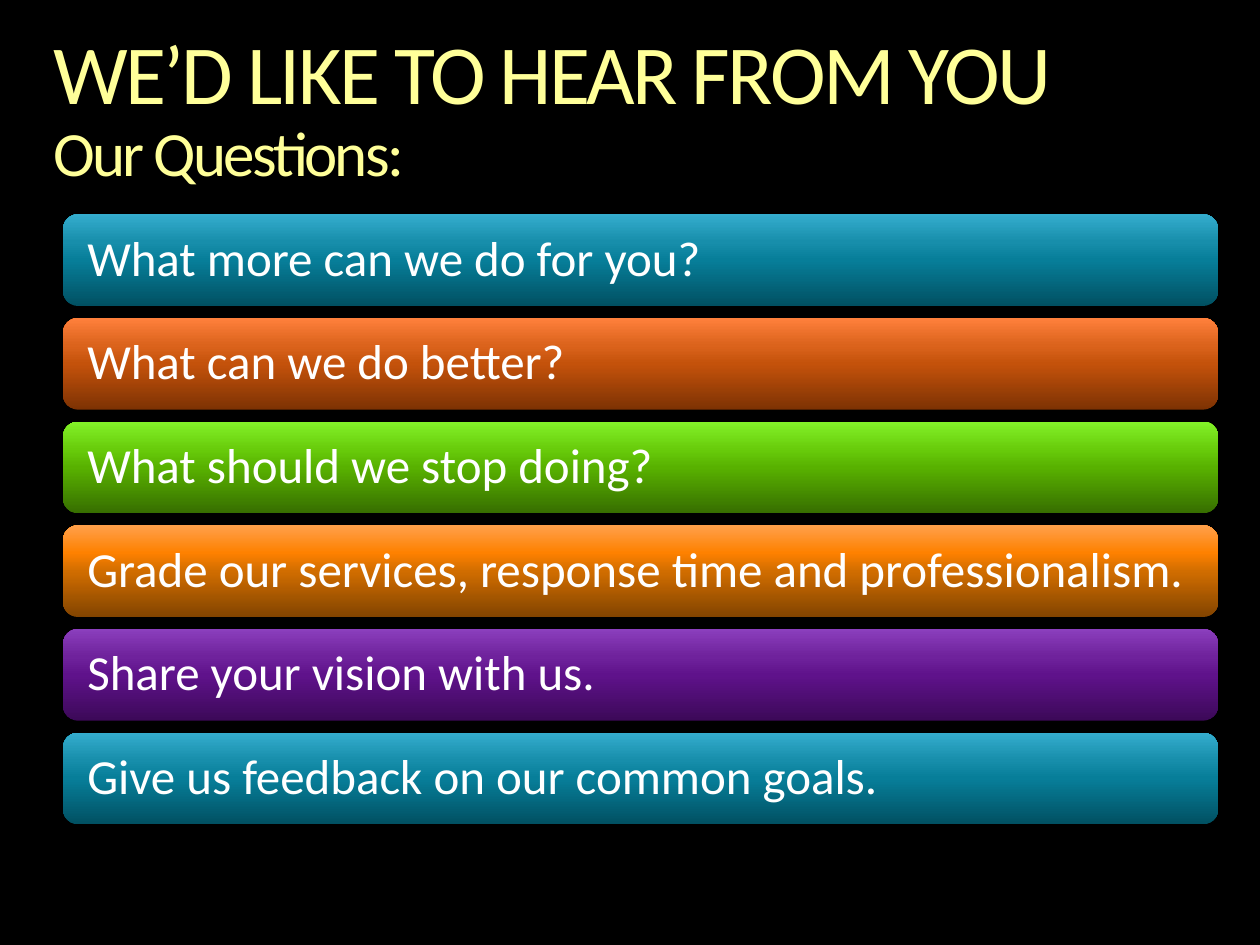
import copy
from dataclasses import dataclass

import pptx
import pptx.dml.color
import pptx.enum.shapes
import pptx.enum.text
import pptx.oxml.ns
import pptx.util

Cm = pptx.util.Cm
Pt = pptx.util.Pt
RGBColor = pptx.dml.color.RGBColor
Anchor = pptx.enum.text.MSO_ANCHOR
qn = pptx.oxml.ns.qn

BLACK = RGBColor(0x00, 0x00, 0x00)
WHITE = RGBColor(0xFF, 0xFF, 0xFF)
YELLOW = RGBColor(0xFF, 0xFF, 0x99)
TEAL = (RGBColor(0x01, 0x50, 0x62), RGBColor(0x07, 0x7E, 0x99),
        RGBColor(0x17, 0x8E, 0xAB), RGBColor(0x35, 0xAD, 0xCE))
RUST = (RGBColor(0x7D, 0x32, 0x03), RGBColor(0xC4, 0x52, 0x0B),
        RGBColor(0xDB, 0x63, 0x1C), RGBColor(0xFF, 0x80, 0x3C))
GREEN = (RGBColor(0x37, 0x6E, 0x00), RGBColor(0x58, 0xB1, 0x00),
         RGBColor(0x68, 0xCC, 0x0B), RGBColor(0x83, 0xF2, 0x29))
ORANGE = (RGBColor(0x82, 0x44, 0x00), RGBColor(0xD1, 0x6D, 0x00),
          RGBColor(0xFE, 0x81, 0x00), RGBColor(0xFF, 0xA0, 0x4B))
PURPLE = (RGBColor(0x3C, 0x09, 0x58), RGBColor(0x5F, 0x12, 0x8B),
          RGBColor(0x6F, 0x22, 0x9C), RGBColor(0x8B, 0x3F, 0xBD))
STOPS = (0, 0.5, 0.7, 1)

FONT = "Calibri"
BAR_LEFT, BAR_TOP = Cm(1.27), Cm(4.32)
BAR_WIDTH, BAR_HEIGHT = Cm(23.29), Cm(1.85)
BAR_PITCH = Cm(2.09)


@dataclass
class Question:
    text: str
    colors: tuple[RGBColor, ...]


QUESTIONS = [
    Question("What more can we do for you?", TEAL),
    Question("What can we do better?", RUST),
    Question("What should we stop doing?", GREEN),
    Question("Grade our services, response time and professionalism.", ORANGE),
    Question("Share your vision with us.", PURPLE),
    Question("Give us feedback on our common goals.", TEAL),
]


def add_text(p, text: str, *, size: float, color: RGBColor, spacing: float = 0) -> None:
    p.alignment = pptx.enum.text.PP_ALIGN.LEFT
    p.line_spacing = 0.9
    r = p.add_run()
    r.text = text
    r.font.name = FONT
    r.font.size = Pt(size)
    r.font.color.rgb = color
    if spacing:
        r._r.get_or_add_rPr().set("spc", str(round(spacing * 100)))


def set_frame(tf, anchor: Anchor, inset: int) -> None:
    tf.word_wrap = True
    tf.vertical_anchor = anchor
    tf.margin_left = tf.margin_right = inset
    tf.margin_top = tf.margin_bottom = inset


def fill_gradient(sp, colors: tuple[RGBColor, ...]) -> None:
    sp.fill.gradient()
    sp.fill.gradient_angle = 90
    gs_list = sp._element.spPr.find(qn("a:gradFill")).find(qn("a:gsLst"))
    while len(gs_list) < len(colors):
        gs_list.append(copy.deepcopy(gs_list[0]))
    for stop, position, color in zip(sp.fill.gradient_stops, STOPS, colors):
        stop.position = position
        stop.color.rgb = color


def add_title(s) -> None:
    sp = s.shapes.title
    sp.left, sp.top, sp.width, sp.height = Cm(1.07), Cm(0.64), Cm(23.29), Cm(3.23)
    tf = sp.text_frame
    set_frame(tf, Anchor.TOP, 0)
    tf.auto_size = pptx.enum.text.MSO_AUTO_SIZE.SHAPE_TO_FIT_TEXT
    p = tf.paragraphs[0]
    add_text(p, "WE’D LIKE TO HEAR FROM YOU", size=48, color=YELLOW, spacing=-1.5)
    p.add_line_break()
    add_text(p, "Our Questions:", size=36, color=YELLOW, spacing=-1.5)


def add_bar(s, question: Question, top: int) -> None:
    sp = s.shapes.add_shape(pptx.enum.shapes.MSO_SHAPE.ROUNDED_RECTANGLE,
                            BAR_LEFT, top, BAR_WIDTH, BAR_HEIGHT)
    sp.shadow.inherit = False
    sp.line.fill.background()
    fill_gradient(sp, question.colors)
    tf = sp.text_frame
    set_frame(tf, Anchor.MIDDLE, Cm(0.3))
    tf.margin_left = Cm(0.4)
    add_text(tf.paragraphs[0], question.text, size=28, color=WHITE)


def main() -> None:
    prs = pptx.Presentation()
    prs.slide_width, prs.slide_height = Cm(25.4), Cm(19.05)
    s = prs.slides.add_slide(prs.slide_layouts.get_by_name("Title Only"))
    s.background.fill.solid()
    s.background.fill.fore_color.rgb = BLACK
    add_title(s)
    for i, question in enumerate(QUESTIONS):
        add_bar(s, question, BAR_TOP + i * BAR_PITCH)
    prs.save("out.pptx")


if __name__ == "__main__":
    main()
